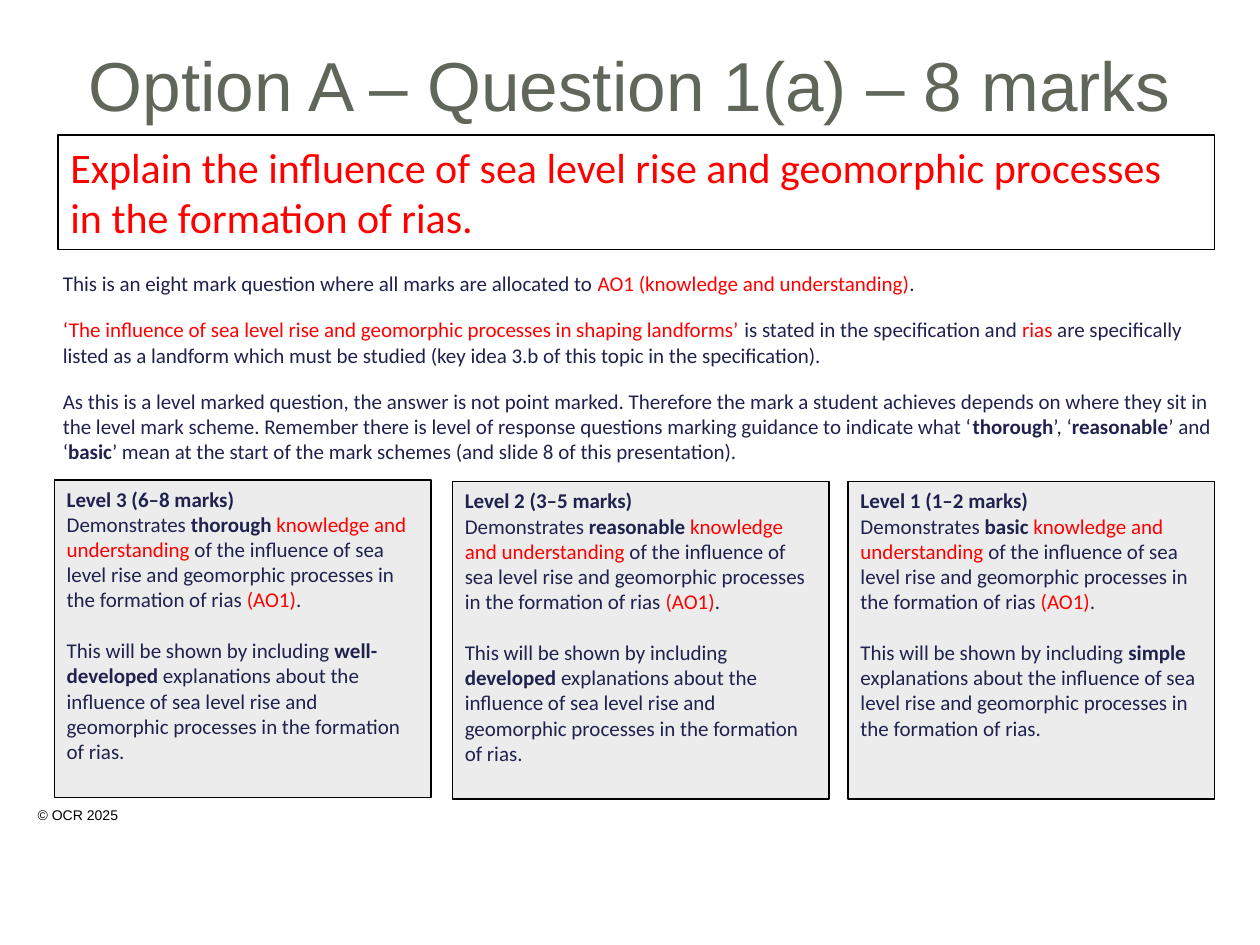
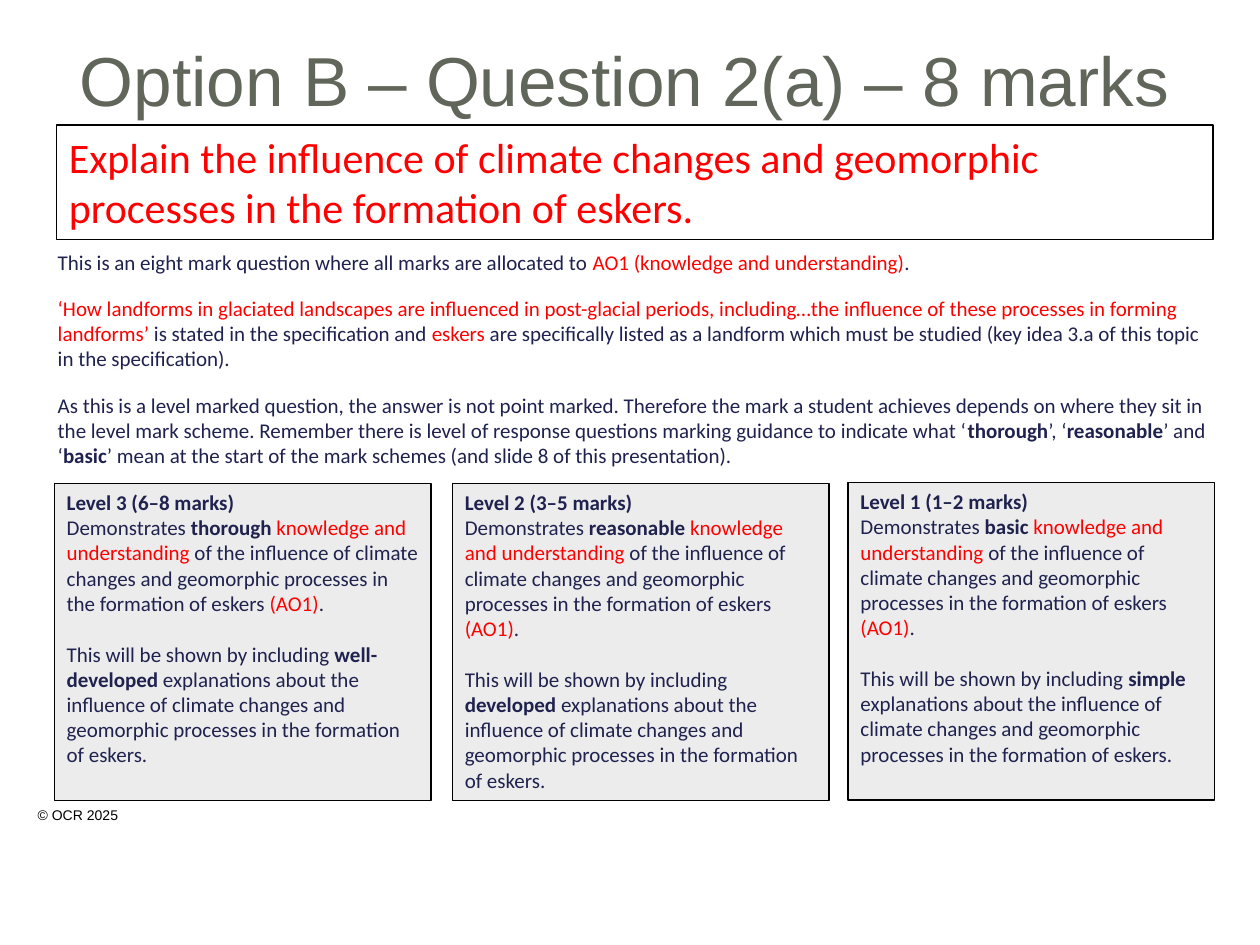
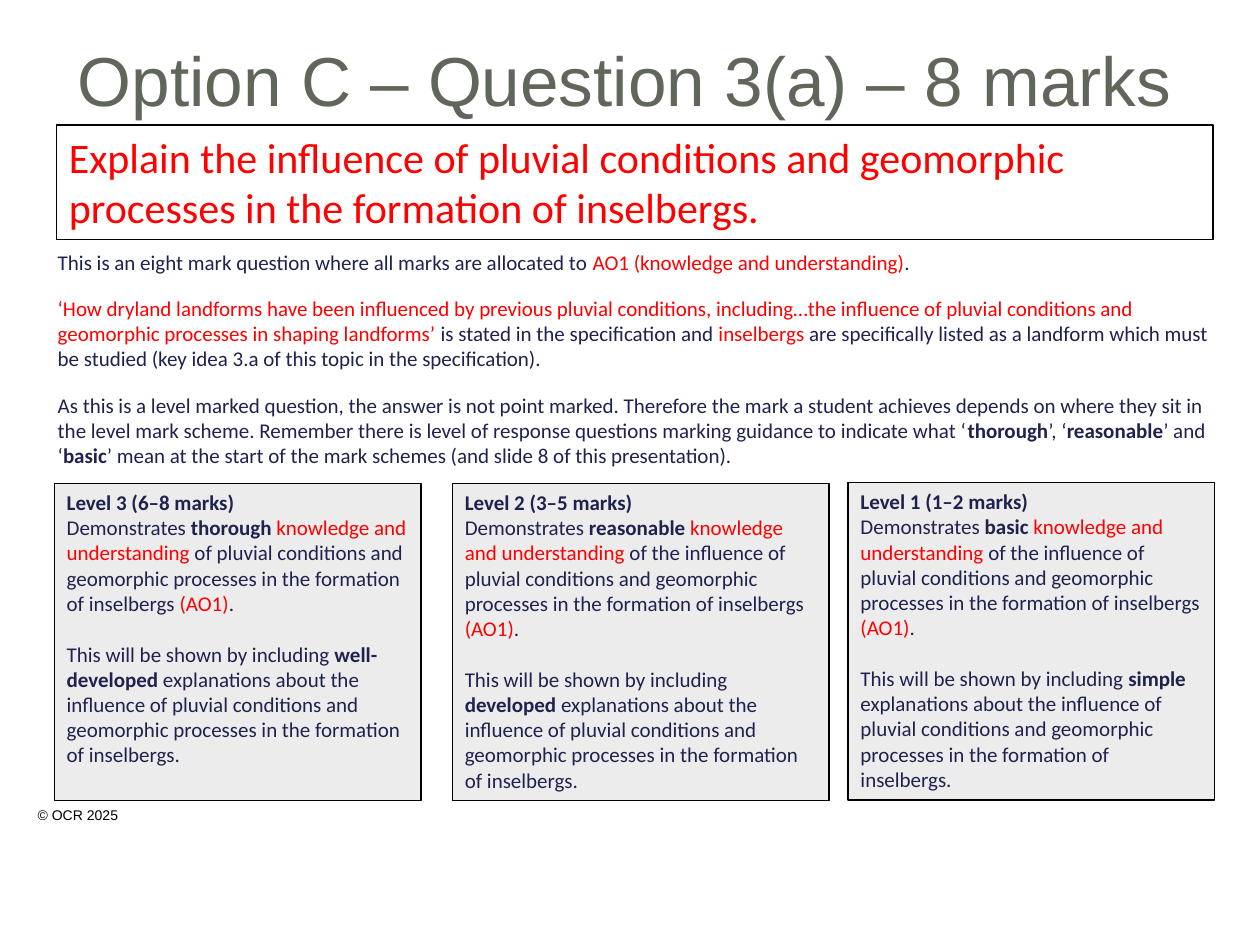
from pptx import Presentation
from pptx.dml.color import RGBColor
from pptx.enum.shapes import MSO_SHAPE
from pptx.enum.text import MSO_ANCHOR as Anchor, PP_ALIGN as Align
from pptx.util import Pt

rgb = RGBColor.from_string
NAVY, RED, GREY_GREEN, PANEL, BLACK = "1F224E", "FF0000", "60665A", "ECECEC", "000000"


def write(frame, paragraphs, size, color, font="Calibri", gaps=(), align=Align.LEFT, anchor=Anchor.TOP):
    """Fill a text frame; *stars* mark bold text and ~tildes~ mark red text."""
    frame.word_wrap = True
    frame.vertical_anchor = anchor
    for i, text in enumerate(paragraphs):
        paragraph = frame.paragraphs[0] if i == 0 else frame.add_paragraph()
        paragraph.alignment = align
        paragraph.font.size = Pt(size)
        paragraph.font.name = font
        paragraph.font.color.rgb = rgb(color)
        if i in gaps:
            paragraph.space_before = Pt(gaps[i])
        for b, part in enumerate(text.split("*")):
            for r, piece in enumerate(part.split("~")):
                if piece:
                    run = paragraph.add_run()
                    run.text = piece
                    if b % 2:
                        run.font.bold = True
                    if r % 2:
                        run.font.color.rgb = rgb(RED)


def add_panel(slide, left, top, width, height, fill=None):
    """Add a rectangle with a thin black outline and return its text frame."""
    panel = slide.shapes.add_shape(MSO_SHAPE.RECTANGLE, Pt(left), Pt(top), Pt(width), Pt(height))
    panel.shadow.inherit = False
    if fill:
        panel.fill.solid()
        panel.fill.fore_color.rgb = rgb(fill)
    else:
        panel.fill.background()
    panel.line.color.rgb = rgb(BLACK)
    panel.line.width = Pt(0.75)
    return panel.text_frame


questions = [
    {
        "title": "Option A – Question 1(a) – 8 marks",
        "cause": "sea level rise",
        "landform": "rias",
        "quote": "‘The influence of sea level rise and geomorphic processes in shaping landforms’",
        "key_idea": "3.b",
        "top_level_focus": "the influence of ",
        "title_at": (36, 2.9),
        "prompt_at": (33.1, 77.2),
        "guidance_at": (28.8, 151.2),
        "level_tops": (274.25, 275.25, 275.25),
        "level_widths": (215.3, 215.3, 209.5),
    },
    {
        "title": "Option B – Question 2(a) – 8 marks",
        "cause": "climate changes",
        "landform": "eskers",
        "quote": "‘How landforms in glaciated landscapes are influenced in post-glacial periods, "
                 "including…the influence of these processes in forming landforms’",
        "key_idea": "3.a",
        "top_level_focus": "the influence of ",
        "title_at": (33.1, 0),
        "prompt_at": (32.2, 71.4),
        "guidance_at": (25.9, 139),
        "level_tops": (276.25, 276.25, 275.75),
        "level_widths": (215.3, 215.3, 209.5),
    },
    {
        "title": "Option C – Question 3(a) – 8 marks",
        "cause": "pluvial conditions",
        "landform": "inselbergs",
        "quote": "‘How dryland landforms have been influenced by previous pluvial conditions, "
                 "including…the influence of pluvial conditions and geomorphic processes in shaping landforms’",
        "key_idea": "3.a",
        "top_level_focus": "",
        "title_at": (33.1, 0),
        "prompt_at": (32.2, 71.4),
        "guidance_at": (25.9, 139),
        "level_tops": (276.25, 276.25, 275.75),
        "level_widths": (209.5, 215.3, 209.5),
    },
]

levels = [
    ("Level 3 (6–8 marks)", "thorough", "well-developed"),
    ("Level 2 (3–5 marks)", "reasonable", "developed"),
    ("Level 1 (1–2 marks)", "basic", "simple"),
]
level_lefts = (31, 258.5, 484.6)

deck = Presentation()
deck.slide_width, deck.slide_height = Pt(720), Pt(540)

for question in questions:
    slide = deck.slides.add_slide(deck.slide_layouts[6])
    landform = question["landform"]
    topic = f"{question['cause']} and geomorphic processes in the formation of {landform}"

    copyright_line = slide.shapes.add_textbox(Pt(14.4), Pt(457.2), Pt(136), Pt(17.3))
    write(copyright_line.text_frame, ["© OCR 2025"], 8, BLACK, "Arial")

    left, top = question["title_at"]
    title = slide.shapes.add_textbox(Pt(left), Pt(top), Pt(648), Pt(90))
    write(title.text_frame, [question["title"]], 39.6, GREY_GREEN, "Arial",
          align=Align.CENTER, anchor=Anchor.MIDDLE)

    prompt = add_panel(slide, *question["prompt_at"], 661, 65.4)
    write(prompt, [f"Explain the influence of {topic}."], 24, RED)

    left, top = question["guidance_at"]
    guidance = slide.shapes.add_textbox(Pt(left), Pt(top), Pt(674), Pt(79.2))
    write(guidance.text_frame, [
        "This is an eight mark question where all marks are allocated to "
        "~AO1 (knowledge and understanding)~.",
        f"~{question['quote']}~ is stated in the specification and ~{landform}~ are specifically listed "
        f"as a landform which must be studied (key idea {question['key_idea']} of this topic in the "
        "specification).",
        "As this is a level marked question, the answer is not point marked. Therefore the mark a student "
        "achieves depends on where they sit in the level mark scheme. Remember there is level of response "
        "questions marking guidance to indicate what ‘*thorough*’, ‘*reasonable*’ and ‘*basic*’ mean at the "
        "start of the mark schemes (and slide 8 of this presentation).",
    ], 12, NAVY, gaps={1: 12, 2: 12})

    focuses = (question["top_level_focus"], "the influence of ", "the influence of ")
    for (heading, quality, detail), focus, left, top, width in zip(
            levels, focuses, level_lefts, question["level_tops"], question["level_widths"]):
        level = add_panel(slide, left, top, width, 181.4, PANEL)
        write(level, [
            f"*{heading}*",
            f"Demonstrates *{quality}* ~knowledge and understanding~ of {focus}{topic} ~(AO1)~.",
            f"This will be shown by including *{detail}* explanations about the influence of {topic}.",
        ], 12, NAVY, gaps={2: 14.6})

deck.save("out.pptx")
